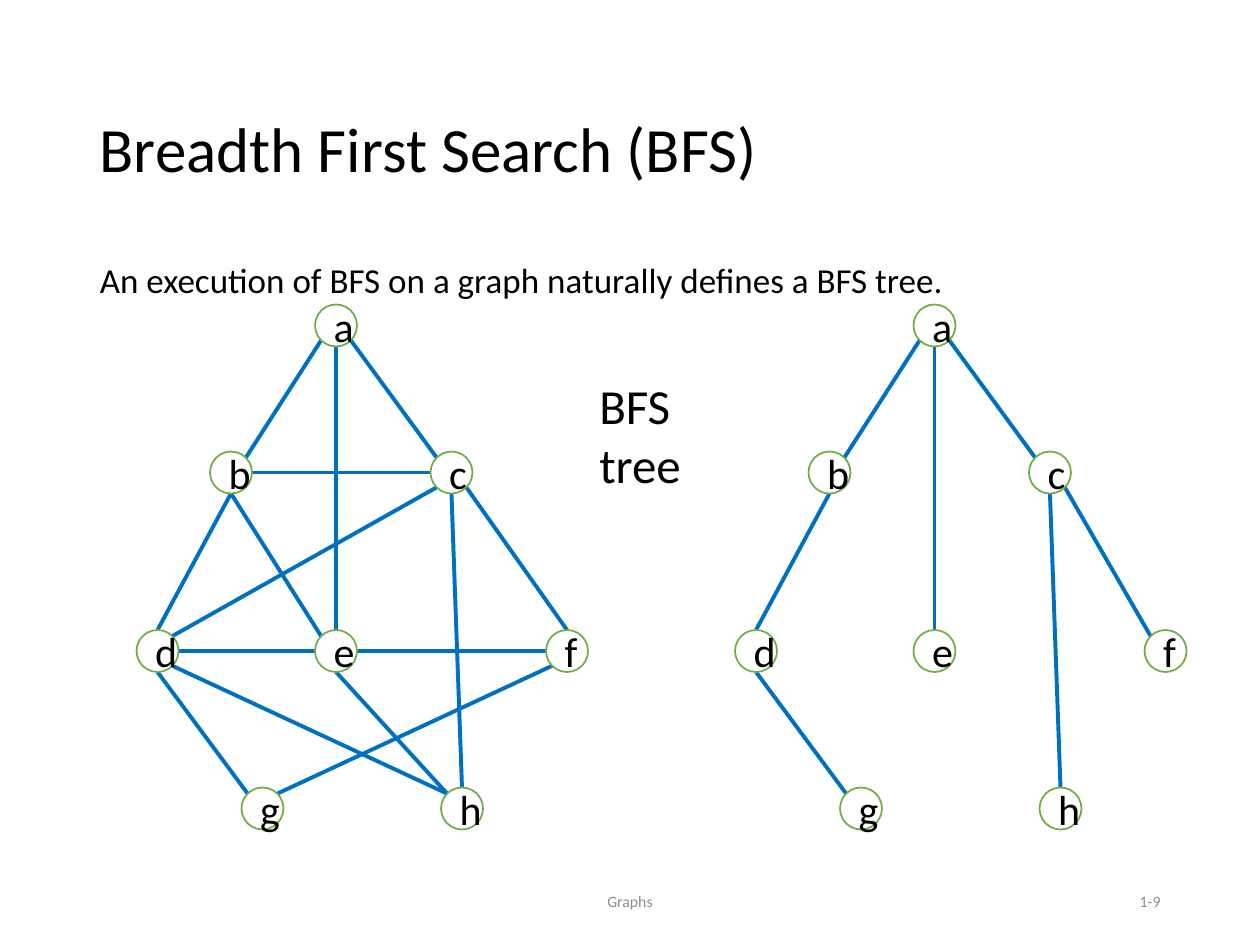
from dataclasses import dataclass
from math import sqrt

from pptx import Presentation
from pptx.dml.color import RGBColor
from pptx.enum.shapes import MSO_CONNECTOR, MSO_SHAPE
from pptx.enum.text import MSO_ANCHOR, MSO_AUTO_SIZE, PP_ALIGN
from pptx.oxml.ns import qn
from pptx.util import Emu, Pt
from lxml.etree import SubElement

PX = 7620  # EMU in one px, 120 px to the inch


@dataclass(frozen=True)
class Theme:
    font: str = "Calibri"
    ink: str = "000000"
    muted: str = "8C8C8C"
    edge: str = "0070C0"
    node_fill: str = "FFFFFF"
    node_line: str = "70AD47"
    title_size: int = 36
    label_size: int = 28
    node_size: int = 24
    body_size: int = 20
    footer_size: int = 9
    edge_width: float = 2.25
    node_width: float = 1


THEME = Theme()
NODE = 40  # diameter of a node
GRAPH_SIZE = (430, 500)

# Top left corner of each node within the graph's box
NODES = {
    "a": (170, 0), "b": (70, 140), "c": (280, 140), "d": (0, 310),
    "e": (170, 310), "f": (390, 310), "g": (100, 460), "h": (290, 460),
}

# Each edge joins a node and its compass point to another
TREE_EDGES = [
    "a SW b NE", "a SE c NW", "a S e N", "b S d N", "c S h N", "d S g NW",
]
GRAPH_ONLY_EDGES = [
    "c SE f N", "b E c W", "b S e NW", "d E e W", "e E f W",
    "c SW d NE", "d SE h NW", "e S h NW", "f SW g NE",
]


def px(*lengths):
    return [Emu(round(length * PX)) for length in lengths]


def place(shape, box):
    shape.left, shape.top, shape.width, shape.height = px(*box)


def write(shape, text, size, color=THEME.ink, align=PP_ALIGN.LEFT):
    """Set one paragraph of text and return it."""
    shape.text_frame.text = text
    paragraph = shape.text_frame.paragraphs[0]
    paragraph.alignment = align
    font = paragraph.runs[0].font
    font.name, font.size = THEME.font, Pt(size)
    font.color.rgb = RGBColor.from_string(color)
    return paragraph


def add_heading(slide, box):
    title = slide.shapes.title
    place(title, box)
    paragraph = write(title, "Breadth First Search (BFS)", THEME.title_size)
    paragraph.line_spacing = 1.15
    paragraph.space_before = Pt(6)
    title.text_frame.vertical_anchor = MSO_ANCHOR.MIDDLE
    title.text_frame.auto_size = MSO_AUTO_SIZE.NONE


def add_body(slide, box):
    body = slide.placeholders[1]
    place(body, box)
    paragraph = write(
        body, "An execution of BFS on a graph naturally defines a BFS tree.",
        THEME.body_size)
    paragraph.line_spacing = 0.9
    paragraph.space_before = Pt(7.5)
    body.text_frame.auto_size = MSO_AUTO_SIZE.NONE
    # No bullet and no hanging indent
    properties = paragraph._p.get_or_add_pPr()
    properties.set("marL", "0")
    properties.set("indent", "0")
    SubElement(properties, qn("a:buNone"))


def add_label(slide, box, text, size, color=THEME.ink, align=PP_ALIGN.LEFT,
              anchor=MSO_ANCHOR.TOP):
    label = slide.shapes.add_textbox(*px(*box))
    label.text_frame.word_wrap = True
    label.text_frame.vertical_anchor = anchor
    write(label, text, size, color, align)


def add_footer(slide, box):
    left, top, width, height = box
    style = (THEME.footer_size, THEME.muted)
    number_width = 270
    add_label(slide, (left + 314, top, 406, height), "Graphs", *style,
              PP_ALIGN.CENTER, MSO_ANCHOR.MIDDLE)
    add_label(slide, (left + width - number_width, top, number_width, height),
              "1-9", *style, PP_ALIGN.RIGHT, MSO_ANCHOR.MIDDLE)


def rim_point(box, name, compass):
    """Point on a node's rim in the given compass direction."""
    across = ("E" in compass) - ("W" in compass)
    down = ("S" in compass) - ("N" in compass)
    reach = NODE / 2 / sqrt(across ** 2 + down ** 2)
    x, y = NODES[name]
    return (box[0] + x + NODE / 2 + across * reach,
            box[1] + y + NODE / 2 + down * reach)


def add_graph(slide, box, edges):
    group = slide.shapes.add_group_shape()

    # Edges
    for edge in edges:
        start, start_side, end, end_side = edge.split()
        line = group.shapes.add_connector(
            MSO_CONNECTOR.STRAIGHT,
            *px(*rim_point(box, start, start_side),
                *rim_point(box, end, end_side)))
        line.line.color.rgb = RGBColor.from_string(THEME.edge)
        line.line.width = Pt(THEME.edge_width)
        SubElement(line._element.spPr, qn("a:effectLst"))

    # Nodes
    for name, (x, y) in NODES.items():
        node = group.shapes.add_shape(
            MSO_SHAPE.OVAL, *px(box[0] + x, box[1] + y, NODE, NODE))
        node.shadow.inherit = False
        node.fill.solid()
        node.fill.fore_color.rgb = RGBColor.from_string(THEME.node_fill)
        node.line.color.rgb = RGBColor.from_string(THEME.node_line)
        node.line.width = Pt(THEME.node_width)
        node.text_frame.vertical_anchor = MSO_ANCHOR.MIDDLE
        write(node, name, THEME.node_size, align=PP_ALIGN.CENTER)


def main():
    presentation = Presentation()
    presentation.slide_width, presentation.slide_height = px(1200, 900)
    slide = presentation.slides.add_slide(presentation.slide_layouts[1])

    add_heading(slide, (83, 48, 1034, 174))
    add_body(slide, (83, 245, 1034, 571))
    add_graph(slide, (130, 290, *GRAPH_SIZE), TREE_EDGES + GRAPH_ONLY_EDGES)
    # In the tree, f hangs from the upper left of its rim
    add_graph(slide, (700, 290, *GRAPH_SIZE), TREE_EDGES + ["c SE f NW"])
    add_label(slide, (559, 352, 170, 68), "BFS tree", THEME.label_size)
    add_footer(slide, (83, 834, 1034, 48))

    presentation.save("out.pptx")


if __name__ == "__main__":
    main()
